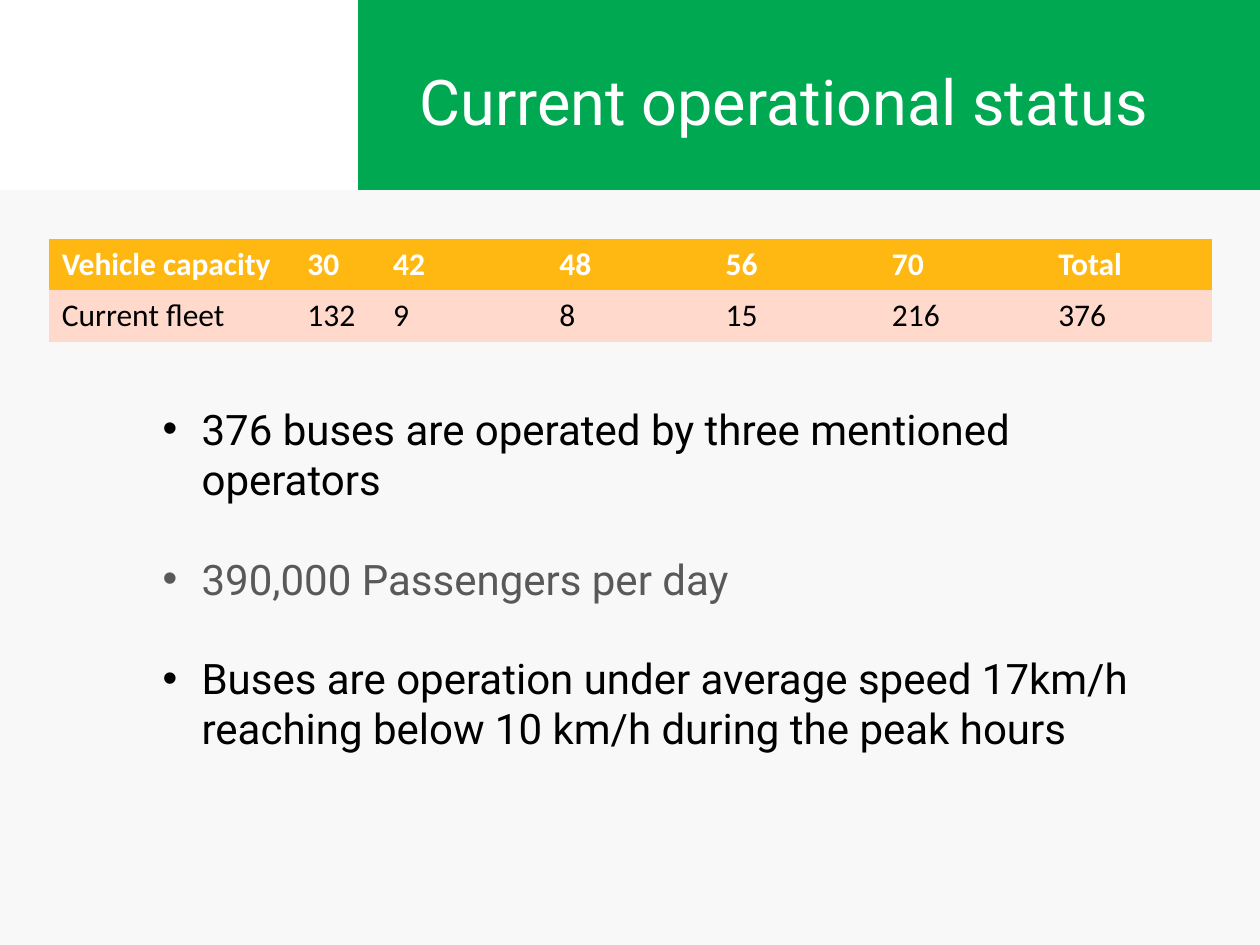
from pptx import Presentation, util as u
from pptx.dml.color import RGBColor
from pptx.enum import shapes, text
from pptx.oxml import parse_xml
from pptx.oxml.ns import nsdecls

PX = 9144
COLORS = {
    "green": "00A851", "white": "FFFFFF", "panel": "F8F8F8", "amber": "FFB812",
    "peach": "FFDACC", "black": "000000", "grey": "595959",
}
FLEET = [
    ["Vehicle capacity", "30", "42", "48", "56", "70", "Total"],
    ["Current fleet", "132", "9", "8", "15", "216", "376"],
]
COLUMN_WIDTHS = [195, 68] + [132] * 5
FACTS = [
    ("376 buses are operated by three mentioned operators", "black"),
    ("390,000 Passengers per day", "grey"),
    ("Buses are operation under average speed 17km/h reaching below 10 km/h during the peak hours", "black"),
]


def emu(*lengths):
    """Turn px lengths into EMU."""
    return [u.Emu(length * PX) for length in lengths]


def paint(fill, color):
    """Give a fill one solid colour."""
    fill.solid()
    fill.fore_color.rgb = RGBColor.from_string(COLORS[color])


def style_runs(paragraph, name, size, color, bold=False):
    """Format every run of a paragraph."""
    for run in paragraph.runs:
        run.font.name = name
        run.font.size = u.Pt(size)
        run.font.bold = bold
        run.font.color.rgb = RGBColor.from_string(COLORS[color])


def add_panel(slide, box, color):
    """Place a plain rectangle behind the placeholders."""
    shape = slide.shapes.add_shape(shapes.MSO_SHAPE.RECTANGLE, *emu(*box))
    shape.shadow.inherit = False
    paint(shape.fill, color)
    shape.line.fill.background()
    slide.shapes.title._element.addprevious(shape._element)


def place_placeholder(placeholder, box, anchor):
    """Move a placeholder to a box and return its text frame."""
    placeholder.left, placeholder.top, placeholder.width, placeholder.height = emu(*box)
    frame = placeholder.text_frame
    frame.word_wrap = True
    frame.auto_size = text.MSO_AUTO_SIZE.NONE
    frame.vertical_anchor = anchor
    return frame


def build_title(slide, box):
    """Fill the heading in the green band."""
    frame = place_placeholder(slide.shapes.title, box, text.MSO_ANCHOR.MIDDLE)
    frame.text = "Current operational status"
    paragraph = frame.paragraphs[0]
    paragraph.alignment = text.PP_ALIGN.LEFT
    paragraph.line_spacing = 0.9
    style_runs(paragraph, "Roboto", 36, "white")


def build_fleet_table(slide, box):
    """Add the table of vehicles by capacity."""
    table = slide.shapes.add_table(len(FLEET), len(FLEET[0]), *emu(*box)).table
    for column, width in zip(table.columns, COLUMN_WIDTHS):
        column.width = emu(width)[0]
    for row_index, row in enumerate(FLEET):
        header = row_index == 0
        for column_index, value in enumerate(row):
            cell = table.cell(row_index, column_index)
            cell.text = value
            paint(cell.fill, "amber" if header else "peach")
            style_runs(cell.text_frame.paragraphs[0], "Calibri", 18,
                       "white" if header else "black", header)
    table_properties = table._tbl.tblPr
    table_properties.find("{*}tableStyleId").text = "{2D5ABB26-0587-4C30-8999-92F81FD0307C}"


def build_facts(slide, box):
    """Fill the bulleted list of operating facts."""
    frame = place_placeholder(slide.placeholders[1], box, text.MSO_ANCHOR.TOP)
    frame.text = "\n".join(fact for fact, _ in FACTS)
    indent = emu(31)[0]
    for index, (paragraph, (_, color)) in enumerate(zip(frame.paragraphs, FACTS)):
        properties = paragraph._p.get_or_add_pPr()
        properties.set("marL", str(indent))
        properties.set("indent", str(-indent))
        properties.append(parse_xml(f'<a:buFont {nsdecls("a")} typeface="Arial"/>'))
        properties.append(parse_xml(f'<a:buChar {nsdecls("a")} char="•"/>'))
        paragraph.space_before = u.Pt(28 if index else 0)
        paragraph.line_spacing = 1.0
        style_runs(paragraph, "Roboto", 24, color)


def main():
    """Build the slide and save it."""
    presentation = Presentation()
    presentation.slide_width, presentation.slide_height = emu(1000, 750)
    slide = presentation.slides.add_slide(presentation.slide_layouts[1])
    paint(slide.background.fill, "green")
    add_panel(slide, (0, 151, 1000, 599), "panel")
    add_panel(slide, (0, 0, 284, 151), "white")
    build_title(slide, (323, 40, 638, 87))
    build_fleet_table(slide, (39, 190, sum(COLUMN_WIDTHS), 81))
    build_facts(slide, (119, 315, 799, 333))
    presentation.save("out.pptx")


if __name__ == "__main__":
    main()
